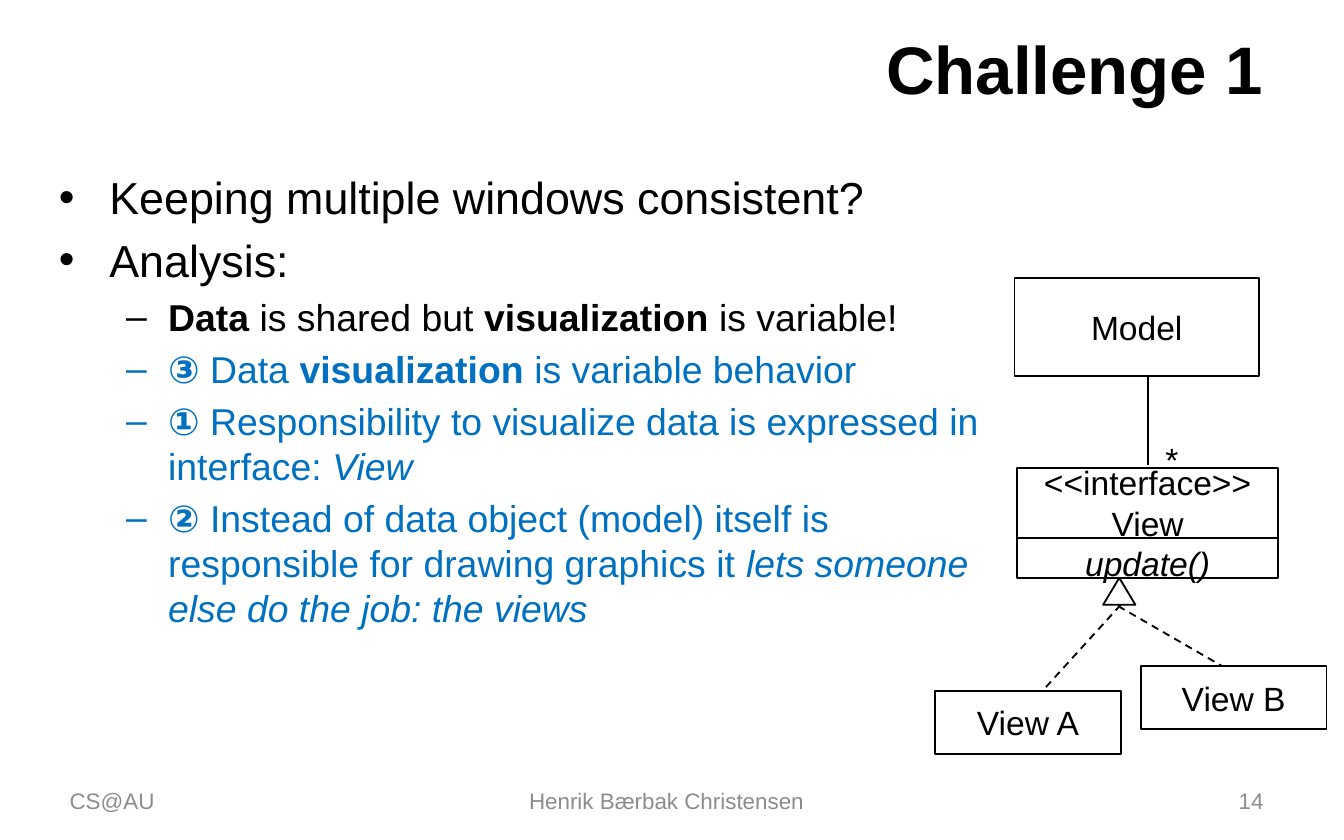
import collections

import pptx
import pptx.dml.color
import pptx.enum.dml
import pptx.enum.shapes
import pptx.enum.text
import pptx.oxml.xmlchemy
import pptx.util

Pt = pptx.util.Pt
RGBColor = pptx.dml.color.RGBColor
ALIGN = pptx.enum.text.PP_ALIGN
ANCHOR = pptx.enum.text.MSO_ANCHOR
SHAPE = pptx.enum.shapes.MSO_SHAPE
new_element = pptx.oxml.xmlchemy.OxmlElement

BLACK = RGBColor(0x00, 0x00, 0x00)
BLUE = RGBColor(0x00, 0x70, 0xC0)
GRAY = RGBColor(0x8C, 0x8C, 0x8C)
FONT = "Arial"

Box = collections.namedtuple("Box", "left top width height")
Level = collections.namedtuple("Level", "size margin hanging bullet")

LEVELS = [Level(24, 27, 27, "•"), Level(20, 58.5, 22.5, "–")]

# Each item: level, colour, runs of (text, style), where b is bold and i italic
ANALYSIS = [
    (0, BLACK, [("Keeping multiple windows consistent?", "")]),
    (0, BLACK, [("Analysis:", "")]),
    (1, BLACK, [("Data ", "b"), ("is shared but ", ""),
                ("visualization ", "b"), ("is variable!", "")]),
    (1, BLUE, [("③ ", "b"), ("Data ", ""), ("visualization ", "b"),
               ("is variable behavior", "")]),
    (1, BLUE, [("① ", "b"),
               ("Responsibility to visualize data is expressed in interface: ", ""),
               ("View", "i")]),
    (1, BLUE, [("② ", "b"),
               ("Instead of data object (model) itself is responsible for "
                "drawing graphics it ", ""),
               ("lets someone else do the job: the views", "i")]),
]


def set_all(target, formats):
    for name, value in formats.items():
        setattr(target, name, value)


def write_run(paragraph, text, size, color, style=""):
    run = paragraph.add_run()
    run.text = text
    set_all(run.font, {"name": FONT, "size": Pt(size),
                       "bold": "b" in style, "italic": "i" in style})
    run.font.color.rgb = color


def points(box):
    return [Pt(value) for value in box]


def inside(box, left, top, width, height):
    """Turn a place relative to a box into a place on the slide."""
    return Box(box.left + left, box.top + top, width, height)


def add_label(slide, box, text, size, color=BLACK, align=ALIGN.CENTER,
              style="", anchor=ANCHOR.MIDDLE, wrap=True):
    frame = slide.shapes.add_textbox(*points(box)).text_frame
    set_all(frame, {"word_wrap": wrap, "vertical_anchor": anchor})
    paragraph = frame.paragraphs[0]
    paragraph.alignment = align
    write_run(paragraph, text, size, color, style)


def add_outline(slide, preset, box, lines=()):
    """Add an unfilled shape holding lines of (text, style)."""
    shape = slide.shapes.add_shape(preset, *points(box))
    shape.shadow.inherit = False
    shape.fill.background()
    shape.line.color.rgb = BLACK
    shape.line.width = Pt(1)
    frame = shape.text_frame
    set_all(frame, {"word_wrap": False, "vertical_anchor": ANCHOR.MIDDLE})
    for index, (text, style) in enumerate(lines):
        paragraph = frame.add_paragraph() if index else frame.paragraphs[0]
        paragraph.alignment = ALIGN.CENTER
        write_run(paragraph, text, 18, BLACK, style)


def add_line(slide, box, start, end, dashed=False):
    ends = [Pt(base + offset) for point in (start, end)
            for base, offset in zip((box.left, box.top), point)]
    line = slide.shapes.add_connector(
        pptx.enum.shapes.MSO_CONNECTOR.STRAIGHT, *ends)
    line.line.color.rgb = BLACK
    line.line.width = Pt(1)
    if dashed:
        line.line.dash_style = pptx.enum.dml.MSO_LINE.DASH
    line._element.spPr.append(new_element("a:effectLst"))


def set_bullet(paragraph, level):
    properties = paragraph._p.get_or_add_pPr()
    properties.set("marL", str(Pt(level.margin)))
    properties.set("indent", str(-Pt(level.hanging)))
    font = new_element("a:buFont")
    font.set("typeface", FONT)
    bullet = new_element("a:buChar")
    bullet.set("char", level.bullet)
    properties.extend([font, bullet])


def add_analysis(slide, box):
    frame = slide.shapes.add_textbox(*points(box)).text_frame
    frame.word_wrap = True
    for index, (depth, color, runs) in enumerate(ANALYSIS):
        paragraph = frame.add_paragraph() if index else frame.paragraphs[0]
        level = LEVELS[depth]
        paragraph.level = depth
        paragraph.space_before = Pt(0.2 * level.size if index else 0)
        set_bullet(paragraph, level)
        for text, style in runs:
            write_run(paragraph, text, level.size, color, style)


def add_class_diagram(slide, box):
    add_outline(slide, SHAPE.RECTANGLE, inside(box, 44, 101.5, 139.7, 59),
                [("<<interface>>", ""), ("View", ""), ("update()", "i")])
    add_line(slide, box, (44, 139), (184.3, 139))

    add_outline(slide, SHAPE.RECTANGLE, inside(box, 42.5, 0, 131, 52.6),
                [("Model", "")])
    add_line(slide, box, (113.8, 52.6), (113.8, 100))
    add_label(slide, inside(box, 116, 82.8, 21.6, 28.8), "*", 18,
              anchor=ANCHOR.TOP, wrap=False)

    for name, left, top in (("View A", 0, 221), ("View B", 110.2, 208)):
        add_outline(slide, SHAPE.RECTANGLE, inside(box, left, top, 99.4, 33.8),
                    [(name, "")])
    add_outline(slide, SHAPE.ISOSCELES_TRIANGLE,
                inside(box, 90, 160.6, 17.3, 14.4))
    add_line(slide, box, (99.4, 175), (57.6, 221), dashed=True)
    add_line(slide, box, (98, 175.7), (154, 208), dashed=True)


def add_footer(slide, box):
    side = 168
    middle = 228
    for text, left, width, align in (
            ("CS@AU", 0, side, ALIGN.LEFT),
            ("Henrik Bærbak Christensen", (box.width - middle) / 2, middle,
             ALIGN.CENTER),
            ("14", box.width - side, side, ALIGN.RIGHT)):
        add_label(slide, inside(box, left, 0, width, box.height), text, 12,
                  GRAY, align)


def main():
    presentation = pptx.Presentation()
    set_all(presentation, {"slide_width": Pt(720), "slide_height": Pt(450)})
    slide = presentation.slides.add_slide(presentation.slide_layouts[6])
    add_label(slide, Box(36, 13, 648, 46.8), "Challenge 1", 36,
              align=ALIGN.RIGHT, style="b")
    add_analysis(slide, Box(24.5, 87.5, 519, 327))
    add_class_diagram(slide, Box(501, 149, 210, 255))
    add_footer(slide, Box(30.2, 417, 653.8, 23.8))
    presentation.save("out.pptx")


if __name__ == "__main__":
    main()
